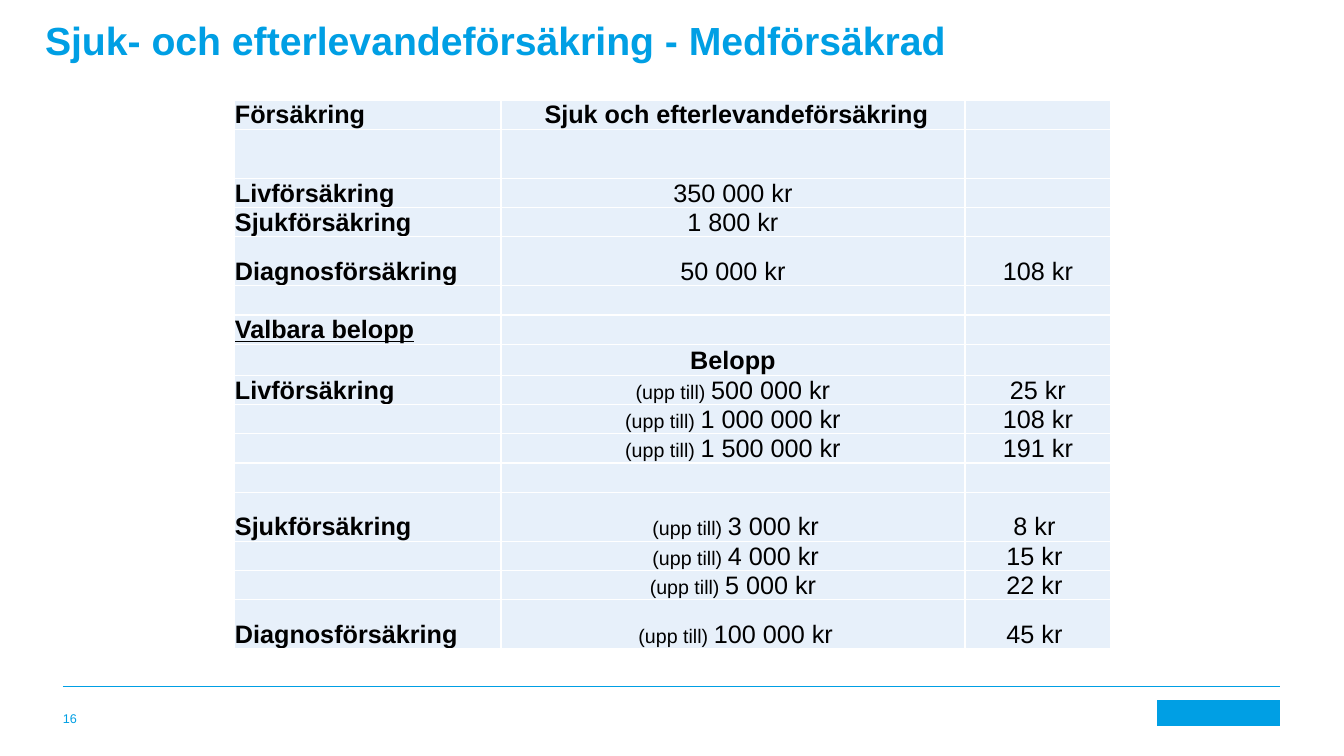
from dataclasses import dataclass

from lxml import etree
from pptx import Presentation
from pptx import util as u
from pptx.dml.color import RGBColor as RGB
from pptx.enum import shapes, text
from pptx.oxml.ns import qn

# Content
TITLE = "Sjuk- och efterlevandeförsäkring - Medförsäkrad"
PAGE = "16"
UP = "(upp till) "
# Each row: name, lead-in, amount, price
ROWS = [
    ("Försäkring", "", "\u00a0Sjuk och efterlevandeförsäkring", ""),
    ("", "", "", ""),
    ("Livförsäkring", "", "350 000 kr", ""),
    ("Sjukförsäkring", "", "1 800 kr", ""),
    ("Diagnosförsäkring", "", "50 000 kr", "108 kr"),
    ("", "", "", ""),
    ("Valbara belopp", "", "", ""),
    ("", "", "Belopp", ""),
    ("Livförsäkring", UP, "500 000 kr", "25 kr"),
    ("", UP, "1 000 000 kr", "108 kr"),
    ("", UP, "1 500 000 kr", "191 kr"),
    ("", "", "", ""),
    ("Sjukförsäkring", " " + UP, "3 000 kr", "8 kr "),
    ("", " " + UP, "4 000 kr", "15 kr "),
    ("", UP, "5 000 kr", "22 kr "),
    ("Diagnosförsäkring", " " + UP, "100 000 kr", "45 kr "),
]
HEADS = {0, 7}       # rows with a bold middle cell
UNDER = {6}          # rows with an underlined name


@dataclass(frozen=True)
class Theme:
    font: str = "Arial"
    blue: RGB = RGB(0x00, 0x9F, 0xE4)
    pale: RGB = RGB(0xE7, 0xF0, 0xFA)
    ink: RGB = RGB(0, 0, 0)
    white: RGB = RGB(0xFF, 0xFF, 0xFF)
    title: int = 28
    cell: int = 18
    small: int = 14
    page: int = 9


T = Theme()
LEFT, CENTER = text.PP_ALIGN.LEFT, text.PP_ALIGN.CENTER
TOP, BOTTOM = text.MSO_ANCHOR.TOP, text.MSO_ANCHOR.BOTTOM

# Layout in px
COLS = (267, 464, 146)
SHORT = 29
HIGHS = {1: 49, 4: 49, 7: 31, 12: 49, 15: 49}


def px(n):
    return u.Emu(round(n * 914400 / 100.8))


def box(*dims):
    return [px(n) for n in dims]


def write(para, words, size=T.cell, color=T.ink, bold=False, line=False,
          align=LEFT):
    para.alignment = align
    run = para.add_run()
    run.text = words
    font = run.font
    font.name, font.size, font.bold = T.font, u.Pt(size), bold
    font.underline = line
    font.color.rgb = color


def frame(shape, anchor):
    tf = shape.text_frame
    tf.margin_left = tf.margin_right = tf.margin_top = tf.margin_bottom = 0
    tf.vertical_anchor, tf.word_wrap = anchor, True
    tf.auto_size = text.MSO_AUTO_SIZE.NONE
    return tf.paragraphs[0]


def rest(para):
    """Give an empty cell the table font, so its row stays low."""
    end = etree.SubElement(para._p, qn("a:endParaRPr"), sz=str(T.cell * 100))
    etree.SubElement(end, qn("a:latin"), typeface=T.font)


def edge(cell):
    props = cell._tc.get_or_add_tcPr()
    for i, side in enumerate(("lnL", "lnR", "lnT", "lnB")):
        line = etree.Element(qn("a:" + side), w=str(u.Pt(1)))
        fill = etree.SubElement(line, qn("a:solidFill"))
        etree.SubElement(fill, qn("a:srgbClr"), val=str(T.white))
        props.insert(i, line)


def add_plan(slide):
    highs = [HIGHS.get(i, SHORT) for i in range(len(ROWS))]
    table = slide.shapes.add_table(
        len(ROWS), len(COLS), *box(234, 100, sum(COLS), sum(highs))).table
    table.first_row = table.horz_banding = False
    for col, wide in zip(table.columns, COLS):
        col.width = px(wide)
    for i, (name, lead, amount, price) in enumerate(ROWS):
        table.rows[i].height = px(highs[i])
        cells = (
            [(name, dict(bold=True, line=i in UNDER))],
            [(lead, dict(size=T.small, align=CENTER)),
             (amount, dict(bold=i in HEADS, align=CENTER))],
            [(price, dict(align=CENTER))],
        )
        for cell, parts in zip(table.rows[i].cells, cells):
            cell.fill.solid()
            cell.fill.fore_color.rgb = T.pale
            cell.vertical_anchor = BOTTOM
            cell.margin_left = cell.margin_right = cell.margin_top = px(1)
            cell.margin_bottom = 0
            edge(cell)
            para = cell.text_frame.paragraphs[0]
            for words, style in parts:
                if words:
                    write(para, words, **style)
            if not para.runs:
                rest(para)


def add_foot(slide):
    rule = slide.shapes.add_connector(
        shapes.MSO_CONNECTOR.STRAIGHT, *box(63, 686, 1280, 686))
    rule.line.color.rgb, rule.line.width = T.blue, u.Pt(0.5)
    etree.SubElement(rule._element.spPr, qn("a:effectLst"))

    page = slide.shapes.add_textbox(*box(63, 700, 58, 26))
    write(frame(page, BOTTOM), PAGE, size=T.page, color=T.blue)

    # Plain block in the brand corner
    mark = slide.shapes.add_shape(
        shapes.MSO_SHAPE.RECTANGLE, *box(1157, 700, 123, 26))
    mark.shadow.inherit = False
    mark.fill.solid()
    mark.fill.fore_color.rgb = T.blue
    mark.line.fill.background()


def main():
    prs = Presentation()
    prs.slide_width, prs.slide_height = box(1344, 756)
    slide = prs.slides.add_slide(prs.slide_layouts[5])

    # Title
    head = slide.shapes.title
    head.left, head.top, head.width, head.height = box(45, 16, 913, 88)
    write(frame(head, TOP), TITLE, size=T.title, color=T.blue, bold=True)

    add_foot(slide)
    add_plan(slide)
    prs.save("out.pptx")


if __name__ == "__main__":
    main()
